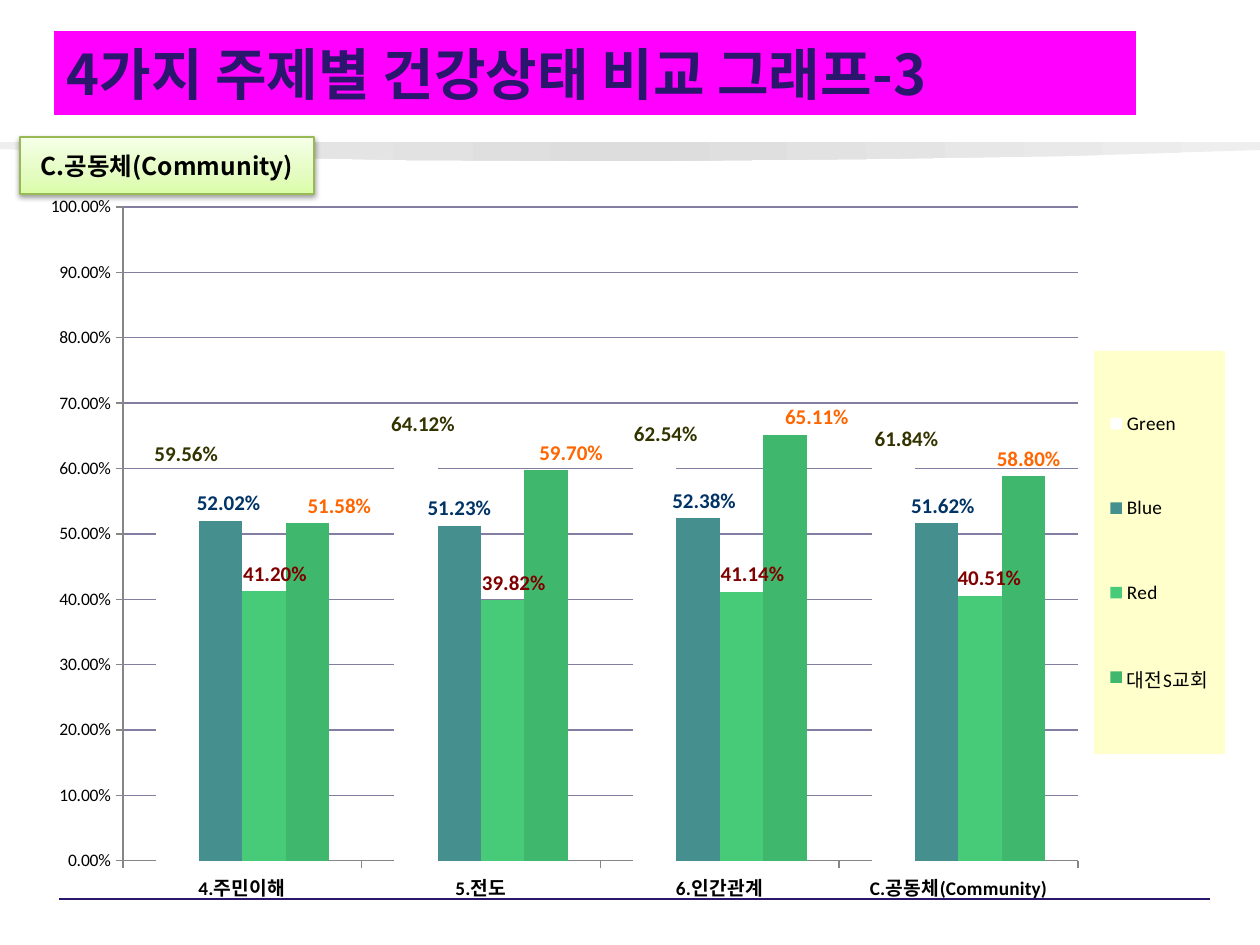
from lxml import etree
from pptx import Presentation
from pptx.chart.data import CategoryChartData
from pptx.dml.color import RGBColor
from pptx.enum.chart import XL_CHART_TYPE, XL_LABEL_POSITION, XL_LEGEND_POSITION, XL_TICK_MARK
from pptx.enum.shapes import MSO_CONNECTOR, MSO_SHAPE
from pptx.enum.text import MSO_ANCHOR, PP_ALIGN
from pptx.oxml import parse_xml
from pptx.oxml.ns import nsdecls, qn
from pptx.util import Pt

PX = 914400 / 126
COLUMN = XL_CHART_TYPE.COLUMN_CLUSTERED
OUT_END = XL_LABEL_POSITION.OUTSIDE_END
RIGHT = XL_LEGEND_POSITION.RIGHT
OUT_TICK = XL_TICK_MARK.OUTSIDE
STRAIGHT = MSO_CONNECTOR.STRAIGHT
RECT = MSO_SHAPE.RECTANGLE
MIDDLE = MSO_ANCHOR.MIDDLE
LEFT, CENTER = PP_ALIGN.LEFT, PP_ALIGN.CENTER

BLACK = RGBColor(0, 0, 0)
NAVY = RGBColor(0x2B, 0x16, 0x6E)
PINK = RGBColor(0xFF, 0x00, 0xFF)
CREAM = RGBColor(0xFF, 0xFF, 0xCC)
LIME = RGBColor(0x98, 0xB9, 0x55)
GRID = RGBColor(0x82, 0x7E, 0xA2)
GRAY = RGBColor(0x86, 0x86, 0x86)
SILVER = [(0, RGBColor(0xEE, 0xEE, 0xEE)), (50, RGBColor(0xDD, 0xDD, 0xDD)),
          (100, RGBColor(0xEE, 0xEE, 0xEE))]
LEAF = [(0, RGBColor(0xDA, 0xFD, 0xA7)), (35, RGBColor(0xE4, 0xFC, 0xC2)),
        (100, RGBColor(0xF5, 0xFF, 0xE7))]

SANS, HANGUL = "Calibri", "Noto Sans CJK KR"
PERCENT = "0.00%"
TOPICS = ["4.주민이해", "5.전도", "6.인간관계", "C.공동체(Community)"]
SERIES = [
    ("Green", [0.5956, 0.6412, 0.6254, 0.6184], [9, 7, 11, 13],
     RGBColor(0xFF, 0xFF, 0xFF), RGBColor(0x33, 0x33, 0x00)),
    ("Blue", [0.5202, 0.5123, 0.5238, 0.5162], [8, 0, 6, 6],
     RGBColor(0x45, 0x8F, 0x8F), RGBColor(0x00, 0x33, 0x66)),
    ("Red", [0.412, 0.3982, 0.4114, 0.4051], [11, 11, 11, 9],
     RGBColor(0x47, 0xCB, 0x79), RGBColor(0x80, 0x00, 0x00)),
    ("대전S교회", [0.5158, 0.597, 0.6511, 0.588], [32, 25, 32, 5],
     RGBColor(0x3F, 0xB8, 0x6D), RGBColor(0xFF, 0x66, 0x00)),
]


def px(*nums):
    return [round(num * PX) for num in nums]


def style(font, size, color=BLACK, bold=False, face=SANS):
    font.size, font.bold, font.name = Pt(size), bold, face
    font.color.rgb = color


def write(shape, text, size, color=BLACK, bold=True, align=LEFT):
    frame = shape.text_frame
    frame.word_wrap = True
    frame.vertical_anchor = MIDDLE
    para = frame.paragraphs[0]
    para.alignment = align
    run = para.add_run()
    run.text = text
    style(run.font, size, color, bold, HANGUL)
    face = etree.SubElement(run.font._element, qn("a:ea"))
    face.set("typeface", HANGUL)


def blend(fill, stops, angle):
    fill.gradient()
    fill.gradient_angle = angle
    group = fill._xPr.find(".//" + qn("a:gsLst"))
    for stop in list(group):
        group.remove(stop)
    for pos, color in stops:
        stop = etree.SubElement(group, qn("a:gs"), pos=str(pos * 1000))
        etree.SubElement(stop, qn("a:srgbClr"), val=str(color))


def place(owner, box, frame, inner=False):
    x, y, w, h = box
    left, top, wide, high = frame
    vals = {"x": (x - left) / wide, "y": (y - top) / high, "w": w / wide, "h": h / high}
    for old in owner.findall(qn("c:layout")):
        owner.remove(old)
    root = etree.Element(qn("c:layout"))
    part = etree.SubElement(root, qn("c:manualLayout"))
    if inner:
        etree.SubElement(part, qn("c:layoutTarget"), val="inner")
    for key in "xy":
        etree.SubElement(part, qn(f"c:{key}Mode"), val="edge")
    for key, val in vals.items():
        etree.SubElement(part, qn(f"c:{key}"), val=f"{val:.4f}")
    return root


def add_decor(slide, box):
    x, y, w, h = box
    edge = [(0, 149), (200, 156), (402, 160), (635, 161), (868, 159),
            (1065, 156), (w, 150), (w, 142)]
    pen = slide.shapes.build_freeform(x, y + 142, scale=PX)
    pen.add_line_segments([(x + dx, y + dy) for dx, dy in edge], close=True)
    band = pen.convert_to_shape()
    band.shadow.inherit = False
    band.line.fill.background()
    blend(band.fill, SILVER, 0)
    rule = slide.shapes.add_connector(STRAIGHT, *px(x + 59, y + 899, x + w - 50, y + 899))
    rule.line.color.rgb, rule.line.width = NAVY, Pt(0.75)
    etree.SubElement(rule._element.spPr, qn("a:effectLst"))


def add_title(slide, box):
    title = slide.shapes.title
    title.left, title.top, title.width, title.height = px(*box)
    title.fill.solid()
    title.fill.fore_color.rgb = PINK
    write(title, "4가지 주제별 건강상태 비교 그래프-3", 32, NAVY)


def add_labels(series, shifts, color, wide):
    labels = series.data_labels
    labels.show_value = True
    labels.number_format, labels.number_format_is_linked = PERCENT, False
    labels.position = OUT_END
    style(labels.font, 12, color, True)
    for idx, shift in enumerate(shifts):
        if not shift:
            continue
        label = series.points[idx].data_label
        style(label.font, 12, color, True)
        label.position = OUT_END
        node = labels._element.xpath(f'c:dLbl[c:idx/@val="{idx}"]')[0]
        node.insert(1, parse_xml(
            f'<c:layout {nsdecls("c")}><c:manualLayout><c:x val="{shift / wide:.4f}"/>'
            '<c:y val="0"/></c:manualLayout></c:layout>'))
        node.insert(2, parse_xml(
            f'<c:numFmt {nsdecls("c")} formatCode="{PERCENT}" sourceLinked="0"/>'))


def add_bars(slide, box):
    x, y, w, h = box
    data = CategoryChartData(number_format=PERCENT)
    data.categories = TOPICS
    for name, vals, *rest in SERIES:
        data.add_series(name, vals)
    chart = slide.shapes.add_chart(COLUMN, *px(*box), data).chart
    chart.has_title = False
    style(chart.font, 10)
    plot = chart.plots[0]
    plot.vary_by_categories, plot.gap_width, plot.overlap = False, 150, 0
    for series, (name, vals, shifts, fill, ink) in zip(plot.series, SERIES):
        series.format.fill.solid()
        series.format.fill.fore_color.rgb = fill
        series.invert_if_negative = False
        add_labels(series, shifts, ink, w)

    for axis, size, bold in ((chart.category_axis, 11, True), (chart.value_axis, 10, False)):
        style(axis.tick_labels.font, size, bold=bold)
        axis.major_tick_mark = OUT_TICK
        axis.format.line.color.rgb = GRAY
    axis = chart.value_axis
    axis.minimum_scale, axis.maximum_scale, axis.major_unit = 0, 1, 0.1
    axis.tick_labels.number_format = PERCENT
    axis.tick_labels.number_format_is_linked = False
    axis.major_gridlines.format.line.color.rgb = GRID
    axis.major_gridlines.format.line.width = Pt(0.75)

    chart.has_legend = True
    legend = chart.legend
    legend.position, legend.include_in_layout = RIGHT, False
    style(legend.font, 11)
    node = legend._element
    spot = place(node, (x + 1068, y + 168, 131, 403), box)
    node.find(qn("c:legendPos")).addnext(spot)
    node.find(qn("c:txPr")).addprevious(parse_xml(
        f'<c:spPr {nsdecls("c", "a")}><a:solidFill><a:srgbClr val="{CREAM}"/>'
        '</a:solidFill></c:spPr>'))
    area = chart._chartSpace.chart.plotArea
    area.insert(0, place(area, (x + 97, y + 24, 955, 654), box, inner=True))


def add_badge(slide, box):
    badge = slide.shapes.add_shape(RECT, *px(*box))
    blend(badge.fill, LEAF, 90)
    badge.line.color.rgb, badge.line.width = LIME, Pt(0.75)
    badge._element.spPr.append(parse_xml(
        f'<a:effectLst {nsdecls("a")}><a:outerShdw blurRad="39370" dist="20320" dir="5400000"'
        ' rotWithShape="0"><a:srgbClr val="000000"><a:alpha val="38000"/></a:srgbClr>'
        '</a:outerShdw></a:effectLst>'))
    write(badge, "C.공동체(Community)", 14, align=CENTER)


def main():
    deck = Presentation()
    deck.slide_width, deck.slide_height = px(1260, 945)
    slide = deck.slides.add_slide(deck.slide_layouts[5])
    add_decor(slide, (0, 0, 1260, 945))
    add_title(slide, (54, 31, 1082, 84))
    add_bars(slide, (26, 183, 1206, 733))
    add_badge(slide, (20, 137, 294, 57))
    deck.save("out.pptx")


if __name__ == "__main__":
    main()
